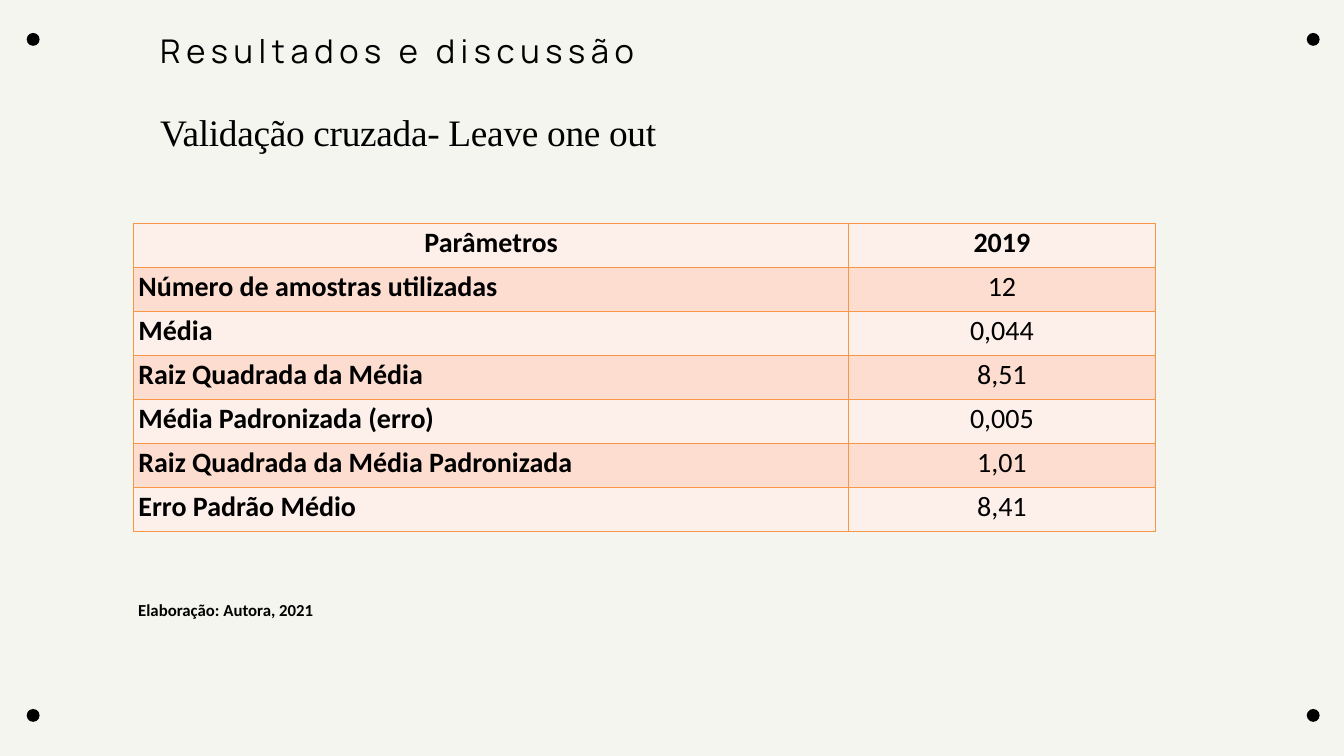
import pptx
import pptx.dml.color
import pptx.enum.shapes
import pptx.enum.text
import pptx.oxml
import pptx.oxml.ns
import pptx.util

Pt = pptx.util.Pt
ALIGN = pptx.enum.text.PP_ALIGN
ANCHOR = pptx.enum.text.MSO_ANCHOR

TITLE = "Resultados e discussão"
SUBTITLE = "Validação cruzada- Leave one out"
SOURCE = "Elaboração: Autora, 2021"
ROWS = [
    ("Parâmetros", "2019"),
    ("Número de amostras utilizadas", "12"),
    ("Média", "0,044"),
    ("Raiz Quadrada da Média", "8,51"),
    ("Média Padronizada (erro)", "0,005"),
    ("Raiz Quadrada da Média Padronizada", "1,01"),
    ("Erro Padrão Médio", "8,41"),
]

WIDTH, HEIGHT = 1440, 810
BACKGROUND, BLACK, BORDER = "F5F5EF", "000000", "F79646"
BANDS = ("FDEFE9", "FCDDCF")
COLUMN_WIDTHS = (766, 328.5)
ROW_HEIGHT = 47.2
DOT_SIZE = 13.8
DOT_MARGIN_X, DOT_MARGIN_Y = 28.5, 35.5


def paint(fill, color):
    fill.solid()
    fill.fore_color.rgb = pptx.dml.color.RGBColor.from_string(color)


def write(frame, text, *, size, font, bold=False, align=ALIGN.LEFT,
          line=None, after=0, spacing=0):
    """Fill a text frame with one formatted paragraph; spacing is in points."""
    para = frame.paragraphs[0]
    para.alignment = align
    para.space_before, para.space_after = Pt(0), Pt(after)
    para.line_spacing = line
    span = para.add_run()
    span.text = text
    span.font.size, span.font.name, span.font.bold = Pt(size), font, bold
    paint(span.font.fill, BLACK)
    if spacing:
        span.font._element.set("spc", str(round(spacing * 100)))


def place(box, left, top, width, height, inset=None):
    box.left, box.top, box.width, box.height = map(Pt, (left, top, width, height))
    frame = box.text_frame
    frame.word_wrap = True
    frame.auto_size = pptx.enum.text.MSO_AUTO_SIZE.SHAPE_TO_FIT_TEXT
    frame.vertical_anchor = ANCHOR.TOP
    if inset is not None:
        frame.margin_left = frame.margin_right = Pt(inset)
        frame.margin_top = frame.margin_bottom = Pt(inset)
    return frame


def outline(cell, color, width):
    properties = cell._tc.get_or_add_tcPr()
    for side in ("lnL", "lnR", "lnT", "lnB"):
        properties.append(pptx.oxml.parse_xml(
            f'<a:{side} {pptx.oxml.ns.nsdecls("a")} w="{Pt(width)}">'
            f'<a:solidFill><a:srgbClr val="{color}"/></a:solidFill></a:{side}>'))


def add_dots(page):
    for center_x in (DOT_MARGIN_X + 7, WIDTH - DOT_MARGIN_X - 4.5):
        for center_y in (DOT_MARGIN_Y + 6.7, HEIGHT - DOT_MARGIN_Y - 8):
            dot = page.shapes.add_shape(
                pptx.enum.shapes.MSO_SHAPE.OVAL,
                Pt(center_x - DOT_SIZE / 2), Pt(center_y - DOT_SIZE / 2),
                Pt(DOT_SIZE), Pt(DOT_SIZE))
            dot.shadow.inherit = False
            paint(dot.fill, BLACK)
            dot.line.fill.background()


def add_results(page):
    table = page.shapes.add_table(
        len(ROWS), len(COLUMN_WIDTHS), Pt(143.3), Pt(239.5),
        Pt(sum(COLUMN_WIDTHS)), Pt(ROW_HEIGHT * len(ROWS))).table
    table.horz_banding = False
    for column, width in zip(table.columns, COLUMN_WIDTHS):
        column.width = Pt(width)
    for r, values in enumerate(ROWS):
        table.rows[r].height = Pt(ROW_HEIGHT)
        for c, value in enumerate(values):
            cell = table.cell(r, c)
            cell.margin_left = cell.margin_right = Pt(5)
            cell.margin_top = cell.margin_bottom = Pt(0)
            outline(cell, BORDER, 1)
            paint(cell.fill, BANDS[r % 2])
            heading = r == 0 or c == 0
            centered = r == 0 or c == 1
            write(cell.text_frame, value, size=30, font="Calibri", bold=heading,
                  align=ALIGN.CENTER if centered else ALIGN.LEFT,
                  line=1.07, after=8)


def main():
    deck = pptx.Presentation()
    deck.slide_width, deck.slide_height = Pt(WIDTH), Pt(HEIGHT)
    page = deck.slides.add_slide(deck.slide_layouts[5])
    paint(page.background.fill, BACKGROUND)

    add_dots(page)
    title = place(page.shapes.title, 171.5, 33, 680, 42.5, inset=0)
    write(title, TITLE, size=35, font="Manrope", line=Pt(42), spacing=6)
    subtitle = place(page.shapes.add_textbox(0, 0, 0, 0), 171.5, 93.5, 562, 66, inset=0)
    write(subtitle, SUBTITLE, size=40, font="Times New Roman",
          align=ALIGN.JUSTIFY, line=1.5, spacing=-0.3)
    add_results(page)
    source = place(page.shapes.add_textbox(0, 0, 0, 0), 141, 639.5, 273.5, 29)
    write(source, SOURCE, size=18, font="Calibri", bold=True)

    deck.save("out.pptx")


if __name__ == "__main__":
    main()
